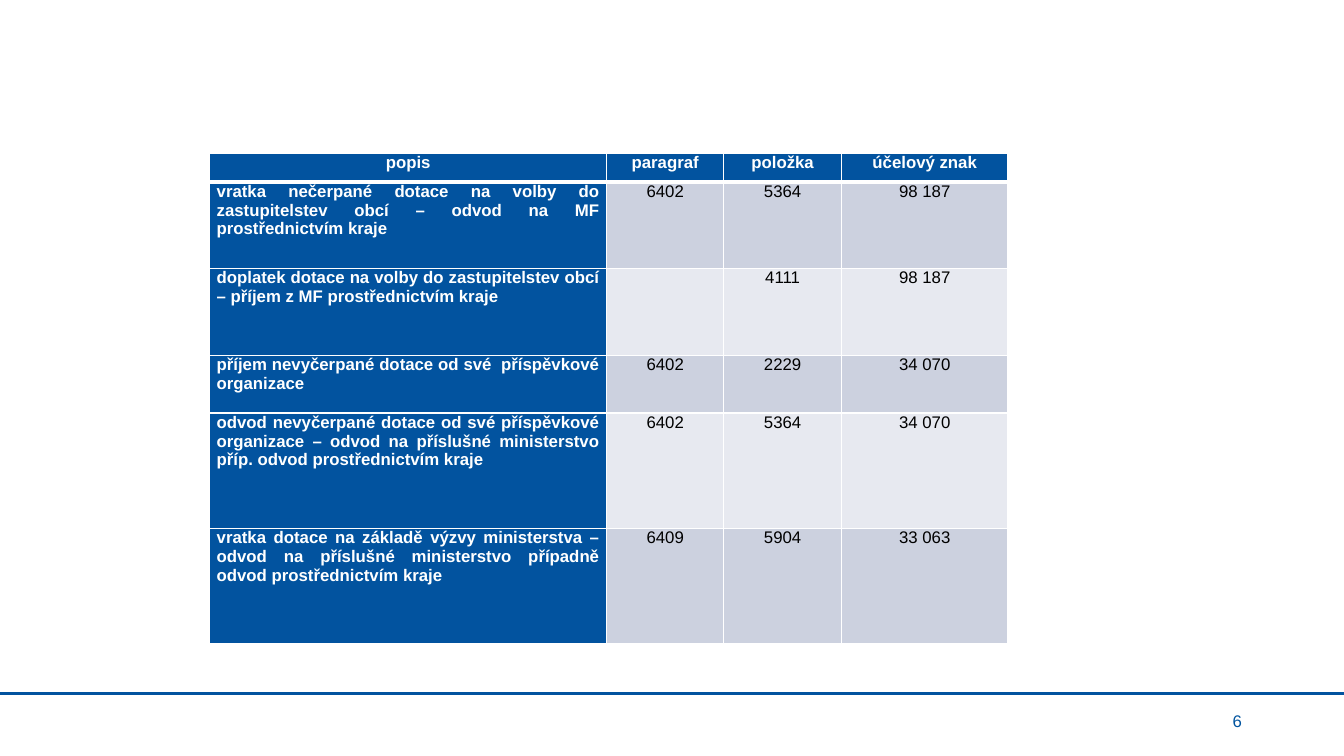
from dataclasses import dataclass

from lxml import etree
from pptx import Presentation
from pptx.dml.color import RGBColor
from pptx.enum.shapes import MSO_CONNECTOR
from pptx.enum.text import MSO_ANCHOR, PP_ALIGN
from pptx.oxml.ns import qn
from pptx.util import Inches, Pt

CENTER, JUSTIFY, RIGHT = PP_ALIGN.CENTER, PP_ALIGN.JUSTIFY, PP_ALIGN.RIGHT
MIDDLE = MSO_ANCHOR.MIDDLE
STRAIGHT = MSO_CONNECTOR.STRAIGHT

PAGE_WIDTH, PAGE_HEIGHT = Inches(13.333), Inches(7.5)
BLUE, NUMBER_BLUE = "02539F", "00549F"
WHITE, BLACK = "FFFFFF", "000000"
BANDS = ("CCD1DF", "E7E9F0")

TABLE_LEFT, TABLE_TOP = Inches(2.08), Inches(1.52)
COLUMN_WIDTHS = [Inches(width) for width in (3.94, 1.16, 1.17, 1.65)]
ROW_UNIT = Inches(4.87) // 17
THIN, THICK = 1, 3


@dataclass(frozen=True)
class TableRow:
    texts: tuple[str, str, str, str]
    units: int


ROWS = (
    TableRow(("popis", "paragraf", "položka", "účelový znak"), 1),
    TableRow(("vratka nečerpané dotace na volby do zastupitelstev obcí – odvod na MF "
              "prostřednictvím kraje", "6402", "5364", "98 187"), 3),
    TableRow(("doplatek dotace na volby do zastupitelstev obcí – příjem z MF "
              "prostřednictvím kraje", "", "4111", "98 187"), 3),
    TableRow(("příjem nevyčerpané dotace od své  příspěvkové organizace",
              "6402", "2229", "34 070"), 2),
    TableRow(("odvod nevyčerpané dotace od své příspěvkové organizace – odvod na "
              "příslušné ministerstvo příp. odvod prostřednictvím kraje",
              "6402", "5364", "34 070"), 4),
    TableRow(("vratka dotace na základě výzvy ministerstva – odvod na příslušné "
              "ministerstvo případně odvod prostřednictvím kraje",
              "6409", "5904", "33 063"), 4),
)


def color(value: str) -> RGBColor:
    return RGBColor.from_string(value)


def set_attributes(target, values: dict) -> None:
    for name, value in values.items():
        setattr(target, name, value)


def write(para, text: str, font_color: str, align, bold: bool = False) -> None:
    para.alignment = align
    span = para.add_run()
    span.text = text
    set_attributes(span.font, {"name": "Arial", "size": Pt(12), "bold": bold})
    span.font.color.rgb = color(font_color)


def add_borders(cell, widths: dict[str, int]) -> None:
    """Put white borders, given in points by side, ahead of the cell's fill."""
    properties = cell._tc.get_or_add_tcPr()
    for position, (side, width) in enumerate(widths.items()):
        border = etree.Element(qn(f"a:ln{side}"), w=str(Pt(width)))
        fill = etree.SubElement(border, qn("a:solidFill"))
        etree.SubElement(fill, qn("a:srgbClr"), val=WHITE)
        properties.insert(position, border)


def format_cell(cell, text: str, row: int, column: int) -> None:
    is_heading = row == 0 or column == 0
    set_attributes(cell, {"margin_left": Inches(0.07), "margin_right": Inches(0.07),
                          "margin_top": 0, "margin_bottom": 0})
    cell.fill.solid()
    cell.fill.fore_color.rgb = color(BLUE if is_heading else BANDS[(row - 1) % 2])
    add_borders(cell, {"L": THIN, "R": THIN,
                       "T": THICK if row == 1 else THIN,
                       "B": THICK if row == 0 else THIN})
    if text:
        para = cell.text_frame.paragraphs[0]
        para.space_after = Pt(6)
        align = JUSTIFY if row and column == 0 else CENTER
        write(para, text, WHITE if is_heading else BLACK, align, is_heading)


def add_dotation_table(page) -> None:
    height = ROW_UNIT * sum(row.units for row in ROWS)
    table = page.shapes.add_table(len(ROWS), len(COLUMN_WIDTHS), TABLE_LEFT, TABLE_TOP,
                                  sum(COLUMN_WIDTHS), height).table
    for column, width in zip(table.columns, COLUMN_WIDTHS):
        column.width = width
    for row_index, row in enumerate(ROWS):
        table.rows[row_index].height = ROW_UNIT * row.units
        for column_index, text in enumerate(row.texts):
            format_cell(table.cell(row_index, column_index), text, row_index, column_index)


def add_footer_line(page) -> None:
    top = Inches(6.88)
    line = page.shapes.add_connector(STRAIGHT, 0, top, PAGE_WIDTH, top)
    line.line.color.rgb = color(BLUE)
    line.line.width = Pt(1.5)
    etree.SubElement(line._element.spPr, qn("a:effectLst"))


def add_page_number(page, number: str) -> None:
    box = page.shapes.add_textbox(Inches(9.42), Inches(6.95), Inches(3), Inches(0.4))
    set_attributes(box.text_frame, {"word_wrap": True, "vertical_anchor": MIDDLE})
    write(box.text_frame.paragraphs[0], number, NUMBER_BLUE, RIGHT)


def main() -> None:
    deck = Presentation()
    set_attributes(deck, {"slide_width": PAGE_WIDTH, "slide_height": PAGE_HEIGHT})
    page = deck.slides.add_slide(deck.slide_layouts.get_by_name("Blank"))
    add_footer_line(page)
    add_dotation_table(page)
    add_page_number(page, "6")
    deck.save("out.pptx")


if __name__ == "__main__":
    main()
